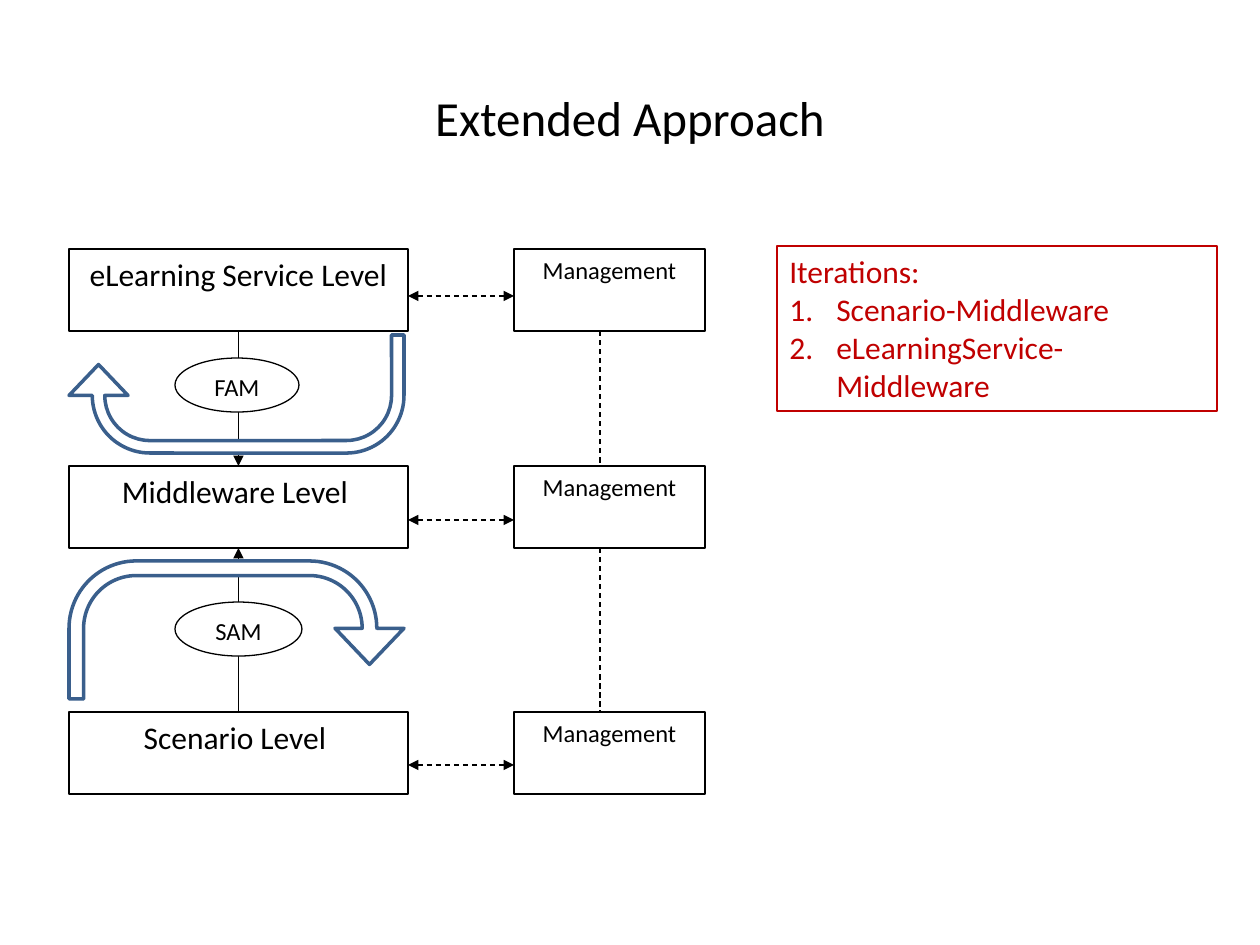
from lxml import etree
from pptx import Presentation
from pptx.dml.color import RGBColor
from pptx.enum.dml import MSO_LINE
from pptx.enum.shapes import MSO_CONNECTOR, MSO_SHAPE
from pptx.enum.text import MSO_ANCHOR, MSO_AUTO_SIZE, PP_ALIGN
from pptx.oxml.ns import qn
from pptx.util import Pt

RECTANGLE = MSO_SHAPE.RECTANGLE
OVAL = MSO_SHAPE.OVAL
U_TURN = MSO_SHAPE.U_TURN_ARROW
STRAIGHT = MSO_CONNECTOR.STRAIGHT
DASH = MSO_LINE.DASH
CENTER, LEFT = PP_ALIGN.CENTER, PP_ALIGN.LEFT
TOP_SIDE, BOTTOM_SIDE = 0, 2

EMU_PER_PX = 914400 / 126
FONT = "Calibri"
COLORS = {"black": "000000", "white": "FFFFFF", "blue": "3A5F8C", "red": "C00000"}


def px(length):
    return round(length * EMU_PER_PX)


def color(name):
    return RGBColor.from_string(COLORS[name])


class DiagramSlide:
    """Holds the style and the slide that is being drawn."""

    def __init__(self, slide, thin=0.75, thick=2):
        self.slide = slide
        self.thin = thin
        self.thick = thick

    def style_paragraph(self, paragraph, size, font_color="black", align=CENTER):
        paragraph.alignment = align
        paragraph.font.name = FONT
        paragraph.font.size = Pt(size)
        paragraph.font.color.rgb = color(font_color)

    def title(self, text, left, top, width, height):
        shape = self.slide.shapes.title
        shape.left, shape.top = px(left), px(top)
        shape.width, shape.height = px(width), px(height)
        shape.text_frame.text = text
        shape.text_frame.vertical_anchor = MSO_ANCHOR.MIDDLE
        self.style_paragraph(shape.text_frame.paragraphs[0], 28)

    def outlined(self, kind, left, top, width, height, line_color, line_width):
        shape = self.slide.shapes.add_shape(
            kind, px(left), px(top), px(width), px(height))
        shape.shadow.inherit = False
        shape.fill.solid()
        shape.fill.fore_color.rgb = color("white")
        shape.line.color.rgb = color(line_color)
        shape.line.width = Pt(line_width)
        return shape

    def node(self, kind, text, size, left, top, width, height):
        shape = self.outlined(kind, left, top, width, height, "black", self.thin)
        shape.text_frame.text = text
        shape.text_frame.vertical_anchor = MSO_ANCHOR.TOP
        self.style_paragraph(shape.text_frame.paragraphs[0], size)
        return shape

    def loop_arrow(self, left, top, width, height, rotation=0):
        shape = self.outlined(U_TURN, left, top, width, height, "blue", self.thick)
        for index, value in enumerate((0.106, 0.25, 0.262, 0.488, 0.75)):
            shape.adjustments[index] = value
        shape.rotation = rotation

    def line(self, start=(0, 0), end=(0, 0), dashed=False, arrows=()):
        connector = self.slide.shapes.add_connector(
            STRAIGHT, *(px(value) for value in (*start, *end)))
        connector.line.color.rgb = color("black")
        connector.line.width = Pt(self.thin)
        if dashed:
            connector.line.dash_style = DASH
        properties = connector.line._get_or_add_ln()
        for arrow in arrows:
            etree.SubElement(properties, qn(f"a:{arrow}"), type="triangle")
        etree.SubElement(connector._element.spPr, qn("a:effectLst"))
        return connector

    def link(self, upper, lower, arrows):
        connector = self.line(arrows=arrows)
        connector.begin_connect(upper, BOTTOM_SIDE)
        connector.end_connect(lower, TOP_SIDE)

    def numbered_note(self, heading, items, left, top, width, height):
        box = self.slide.shapes.add_textbox(px(left), px(top), px(width), px(height))
        box.line.color.rgb = color("red")
        box.line.width = Pt(self.thin)
        frame = box.text_frame
        frame.word_wrap = True
        frame.auto_size = MSO_AUTO_SIZE.SHAPE_TO_FIT_TEXT
        frame.text = heading
        self.style_paragraph(frame.paragraphs[0], 18, "red", LEFT)
        for item in items:
            paragraph = frame.add_paragraph()
            paragraph.text = item
            self.style_paragraph(paragraph, 18, "red", LEFT)
            properties = paragraph._p.get_or_add_pPr()
            properties.set("marL", str(px(47)))
            properties.set("indent", str(-px(47)))
            numbering = etree.Element(qn("a:buAutoNum"), type="arabicPeriod")
            properties.insert(0, numbering)


def main():
    presentation = Presentation()
    presentation.slide_width, presentation.slide_height = px(1260), px(945)
    title_only = presentation.slide_layouts[5]
    diagram = DiagramSlide(presentation.slides.add_slide(title_only))
    diagram.title("Extended Approach", 63, 38, 1134, 158)

    # Level boxes with their management boxes
    level_left, level_width, box_height = 69, 339, 82
    management_left, management_width = 514, 191
    rows = [("eLearning Service Level", 249, 296),
            ("Middleware Level ", 466, 520),
            ("Scenario Level ", 712, 765)]
    levels = [diagram.node(RECTANGLE, text, 18, level_left, top, level_width, box_height)
              for text, top, _ in rows]
    for _, top, _ in rows:
        diagram.node(RECTANGLE, "Management", 14,
                     management_left, top, management_width, box_height)

    # Links between levels, both pointing at the middleware
    service, middleware, scenario = levels
    diagram.link(service, middleware, ["tailEnd"])
    diagram.link(middleware, scenario, ["headEnd"])

    # Dashed links down the management column and across each row
    for (_, top, _), (_, next_top, _) in zip(rows, rows[1:]):
        diagram.line((600, top + box_height), (600, next_top), dashed=True)
    for _, _, link_y in rows:
        diagram.line((level_left + level_width, link_y), (management_left, link_y),
                     dashed=True, arrows=["headEnd", "tailEnd"])

    # Mapping models on the links
    diagram.node(OVAL, "FAM", 14, 175, 358, 124, 54)
    diagram.node(OVAL, "SAM", 14, 175, 602, 127, 54)

    # Iteration loops
    diagram.loop_arrow(69, 561, 335, 138)
    diagram.loop_arrow(69, 335, 335, 118, rotation=180)

    # Iteration list
    diagram.numbered_note("Iterations:",
                          ["Scenario-Middleware", "eLearningService-Middleware"],
                          777, 246, 440, 165)

    presentation.save("out.pptx")


if __name__ == "__main__":
    main()
